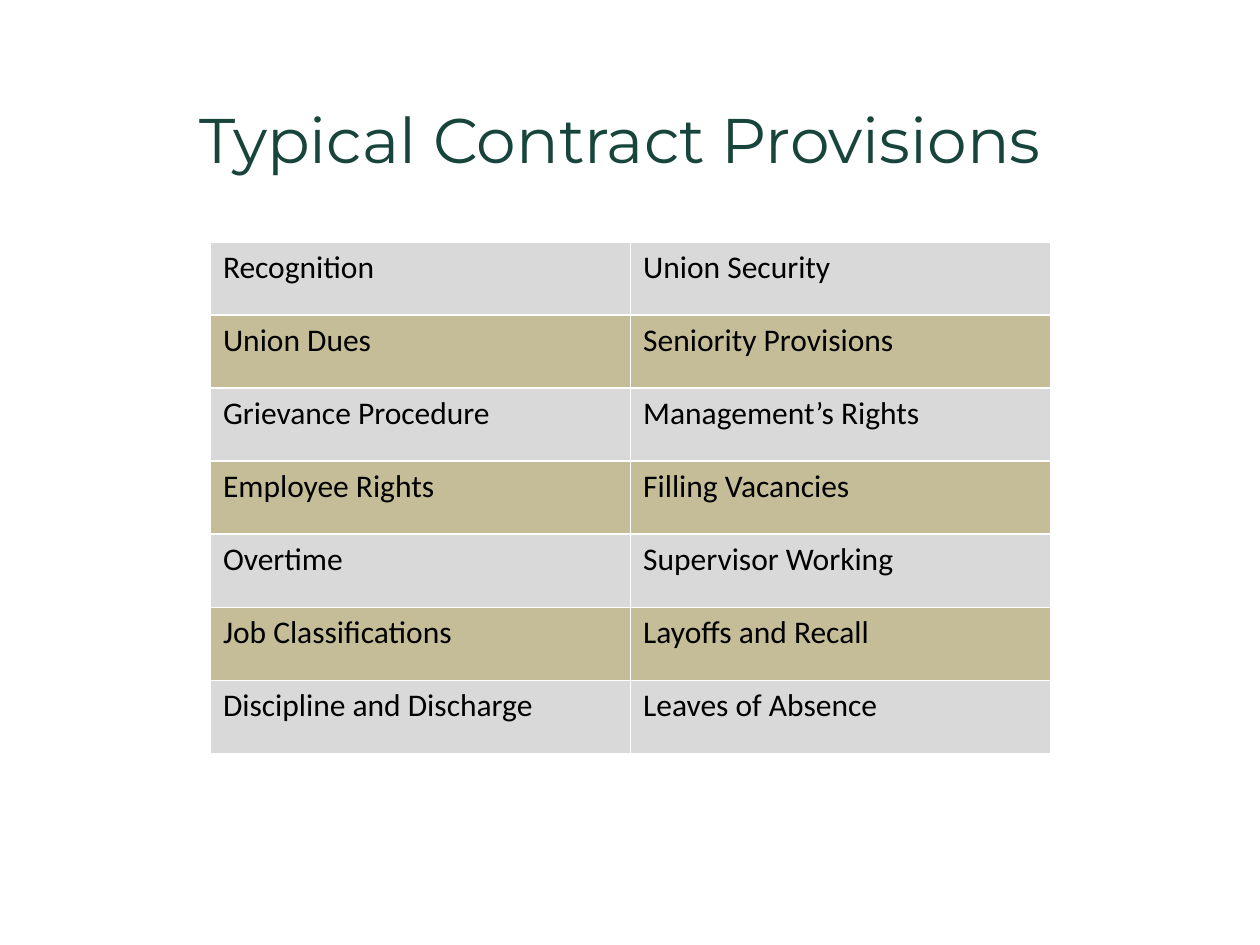
"""Build a slide with a two-column table of typical contract provisions."""
from lxml.etree import SubElement
from pptx import Presentation
from pptx.dml.color import RGBColor as RGB
from pptx.enum.text import MSO_ANCHOR as Anchor, PP_ALIGN as Align
from pptx.oxml.ns import qn
from pptx.util import Inches, Pt

TITLE = "Typical Contract Provisions"
ROWS = [
    ("Recognition", "Union Security"),
    ("Union Dues", "Seniority Provisions"),
    ("Grievance Procedure", "Management’s Rights"),
    ("Employee Rights", "Filling Vacancies"),
    ("Overtime", "Supervisor Working"),
    ("Job Classifications", "Layoffs and Recall"),
    ("Discipline and Discharge", "Leaves of Absence"),
]
GREEN = RGB(0x18, 0x45, 0x3B)
BLACK = RGB(0, 0, 0)
WHITE = RGB(0xFF, 0xFF, 0xFF)
GRAY = RGB(0xD9, 0xD9, 0xD9)
TAN = RGB(0xC4, 0xBD, 0x97)
BANDS = (GRAY, TAN)


def set_font(para, name, size, color):
    font = para.font
    font.name, font.size, font.bold = name, Pt(size), False
    font.color.rgb = color


def add_edges(cell):
    props = cell._tc.get_or_add_tcPr()
    for side in ("lnL", "lnR", "lnT", "lnB"):
        line = SubElement(props, qn(f"a:{side}"), w=str(Pt(1)))
        fill = SubElement(line, qn("a:solidFill"))
        SubElement(fill, qn("a:srgbClr"), val=str(WHITE))


def add_title(slide):
    title = slide.shapes.title
    title.left, title.top = Inches(0.42), Inches(0.75)
    title.width, title.height = Inches(9), Inches(0.53)
    frame = title.text_frame
    frame.text = TITLE
    frame.vertical_anchor = Anchor.TOP
    para = frame.paragraphs[0]
    para.alignment = Align.CENTER
    set_font(para, "Montserrat", 36, GREEN)


def add_grid(slide):
    high = Inches(0.58) * len(ROWS)
    frame = slide.shapes.add_table(
        len(ROWS), len(ROWS[0]), Inches(1.67), Inches(1.92), Inches(6.67), high)
    table = frame.table
    for r, row in enumerate(ROWS):
        for c, text in enumerate(row):
            cell = table.cell(r, c)
            add_edges(cell)
            cell.fill.solid()
            cell.fill.fore_color.rgb = BANDS[r % 2]
            cell.text = text
            set_font(cell.text_frame.paragraphs[0], "Calibri", 18, BLACK)


def main():
    deck = Presentation()
    deck.slide_width, deck.slide_height = Inches(10), Inches(7.5)
    slide = deck.slides.add_slide(deck.slide_layouts[5])
    add_title(slide)
    add_grid(slide)
    deck.save("out.pptx")


if __name__ == "__main__":
    main()
